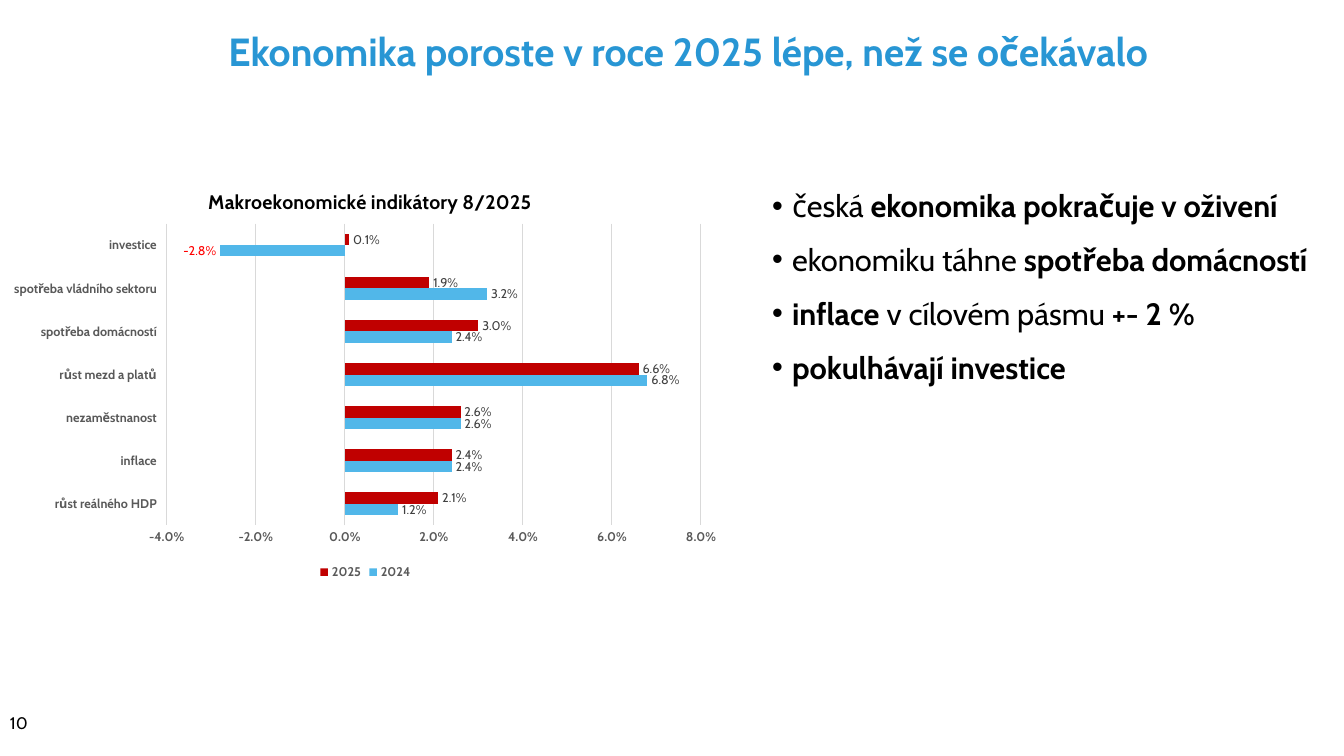
import dataclasses

import pptx
import pptx.chart.data
import pptx.dml.color
import pptx.enum.chart
import pptx.enum.text
import pptx.oxml
import pptx.oxml.ns
import pptx.util

qn = pptx.oxml.ns.qn
Pt = pptx.util.Pt
PX = 12192000 / 1344
PERCENT = "0.0%"


@dataclasses.dataclass(frozen=True)
class Theme:
    font: str = "Cabin"
    title: str = "2896D4"
    text: str = "000000"
    axis: str = "595959"
    label: str = "404040"
    grid: str = "D9D9D9"
    negative: str = "FF0000"
    series: tuple = ("51B7E9", "C00000")
    title_size: int = 28
    body_size: int = 22
    number_size: int = 12
    chart_title_size: int = 14
    chart_size: int = 10
    axis_size: int = 9


def emu(px):
    return pptx.util.Emu(round(px * PX))


def rgb(value):
    return pptx.dml.color.RGBColor.from_string(value)


def place(sp, box):
    sp.left, sp.top, sp.width, sp.height = (emu(v) for v in box)


def set_layout(parent, index, **fractions):
    """Give a chart part a fixed place, in fractions of the chart."""
    for old in parent.findall(qn("c:layout")):
        parent.remove(old)
    items = [("layoutTarget", "inner")] if "w" in fractions else []
    items += [("xMode", "edge"), ("yMode", "edge"), *fractions.items()]
    inner = "".join(f'<c:{name} val="{value}"/>' for name, value in items)
    parent.insert(index, pptx.oxml.parse_xml(
        f'<c:layout {pptx.oxml.ns.nsdecls("c")}>'
        f"<c:manualLayout>{inner}</c:manualLayout></c:layout>"))


class Deck:
    def __init__(self, theme):
        self.theme = theme
        self.prs = pptx.Presentation()
        self.prs.slide_width, self.prs.slide_height = emu(1344), emu(756)
        self.slide = self.prs.slides.add_slide(self.prs.slide_layouts[1])

    def style(self, font, size, color, bold=False):
        font.name, font.size, font.bold = self.theme.font, Pt(size), bold
        font.color.rgb = rgb(color)

    def run(self, p, text, size, color, bold=False):
        r = p.add_run()
        r.text = text
        self.style(r.font, size, color, bold)

    def frame(self, sp, box, anchor):
        place(sp, box)
        tf = sp.text_frame
        tf.word_wrap = True
        tf.auto_size = pptx.enum.text.MSO_AUTO_SIZE.NONE
        tf.vertical_anchor = anchor
        return tf

    def title(self, text, box):
        tf = self.frame(self.slide.shapes.title, box, pptx.enum.text.MSO_ANCHOR.MIDDLE)
        p = tf.paragraphs[0]
        p.alignment = pptx.enum.text.PP_ALIGN.CENTER
        self.run(p, text, self.theme.title_size, self.theme.title, True)

    def page_number(self, text, box):
        sp = self.slide.shapes.add_textbox(0, 0, 0, 0)
        tf = self.frame(sp, box, pptx.enum.text.MSO_ANCHOR.MIDDLE)
        self.run(tf.paragraphs[0], text, self.theme.number_size, self.theme.text)

    def bullets(self, items, box):
        """Each item is a list of (text, bold) runs."""
        tf = self.frame(self.slide.placeholders[1], box, pptx.enum.text.MSO_ANCHOR.TOP)
        for i, runs in enumerate(items):
            p = tf.add_paragraph() if i else tf.paragraphs[0]
            p.space_before, p.space_after, p.line_spacing = Pt(0), Pt(12), 1.0
            pPr = p._p.get_or_add_pPr()
            pPr.set("marL", str(emu(20)))
            pPr.set("indent", str(-emu(20)))
            pPr.append(pptx.oxml.parse_xml(
                f'<a:buChar {pptx.oxml.ns.nsdecls("a")} char="•"/>'))
            for text, bold in runs:
                self.run(p, text, self.theme.body_size, self.theme.text, bold)

    def bar_chart(self, title, categories, series, box):
        t = self.theme
        data = pptx.chart.data.CategoryChartData(number_format=PERCENT)
        data.categories = categories
        for name, values in series.items():
            data.add_series(name, values)
        chart = self.slide.shapes.add_chart(
            pptx.enum.chart.XL_CHART_TYPE.BAR_CLUSTERED,
            *(emu(v) for v in box), data).chart
        self.style(chart.font, t.chart_size, t.text)
        p = chart.chart_title.text_frame.paragraphs[0]
        self.run(p, title, t.chart_title_size, t.text, True)
        chart.chart_title.include_in_layout = False
        set_layout(chart.chart_title._element, 1, x=0.28, y=0.045)
        set_layout(chart._chartSpace.chart.plotArea, 0, x=0.228, y=0.138, w=0.731, h=0.722)

        chart.has_legend = True
        chart.legend.position = pptx.enum.chart.XL_LEGEND_POSITION.BOTTOM
        chart.legend.include_in_layout = False
        self.style(chart.legend.font, t.axis_size, t.axis, True)
        self.axes(chart)

        plot = chart.plots[0]
        plot.gap_width = 182
        plot.vary_by_categories = False
        for s, color in zip(plot.series, t.series):
            self.series(s, color)

    def axes(self, chart):
        t = self.theme
        cat, val = chart.category_axis, chart.value_axis
        for axis in (cat, val):
            axis.major_tick_mark = pptx.enum.chart.XL_TICK_MARK.NONE
            axis.minor_tick_mark = pptx.enum.chart.XL_TICK_MARK.NONE
            self.style(axis.tick_labels.font, t.axis_size, t.axis, True)
        cat.tick_label_position = pptx.enum.chart.XL_TICK_LABEL_POSITION.LOW
        val.minimum_scale, val.maximum_scale, val.major_unit = -0.04, 0.08, 0.02
        val.tick_labels.number_format = PERCENT
        val.tick_labels.number_format_is_linked = False
        val.format.line.fill.background()
        for part in (cat, val.major_gridlines):
            part.format.line.color.rgb = rgb(t.grid)
            part.format.line.width = Pt(0.75)

    def series(self, s, color):
        """Colour one series and label its bars, negative values in red."""
        t = self.theme
        outside = pptx.enum.chart.XL_LABEL_POSITION.OUTSIDE_END
        s.format.fill.solid()
        s.format.fill.fore_color.rgb = rgb(color)
        s.invert_if_negative = False
        labels = s.data_labels
        labels.show_value = True
        labels.number_format, labels.number_format_is_linked = PERCENT, False
        labels.position = outside
        self.style(labels.font, t.axis_size, t.label)
        for i, value in enumerate(s.values):
            if value < 0:
                label = s.points[i].data_label
                self.style(label.font, t.axis_size, t.negative)
                label.position = outside


def main():
    deck = Deck(Theme())
    deck.title("Ekonomika poroste v roce 2025 lépe, než se očekávalo", (93, 1, 1190, 99))
    deck.bullets([
        [("česká ", False), ("ekonomika pokračuje v oživení", True)],
        [("ekonomiku táhne ", False), ("spotřeba domácností", True)],
        [("inflace ", True), ("v cílovém pásmu ", False), ("+- 2 %", True)],
        [("pokulhávají investice", True)],
    ], (762, 182, 582, 302))
    deck.bar_chart(
        "Makroekonomické indikátory 8/2025",
        ["růst reálného HDP", "inflace", "nezaměstnanost", "růst mezd a platů",
         "spotřeba domácností", "spotřeba vládního sektoru", "investice"],
        {"2024": [0.012, 0.024, 0.026, 0.068, 0.024, 0.032, -0.028],
         "2025": [0.021, 0.024, 0.026, 0.066, 0.03, 0.019, 0.001]},
        (0, 166, 731, 418))
    deck.page_number("10", (0, 701, 48, 43))
    deck.prs.save("out.pptx")


if __name__ == "__main__":
    main()
